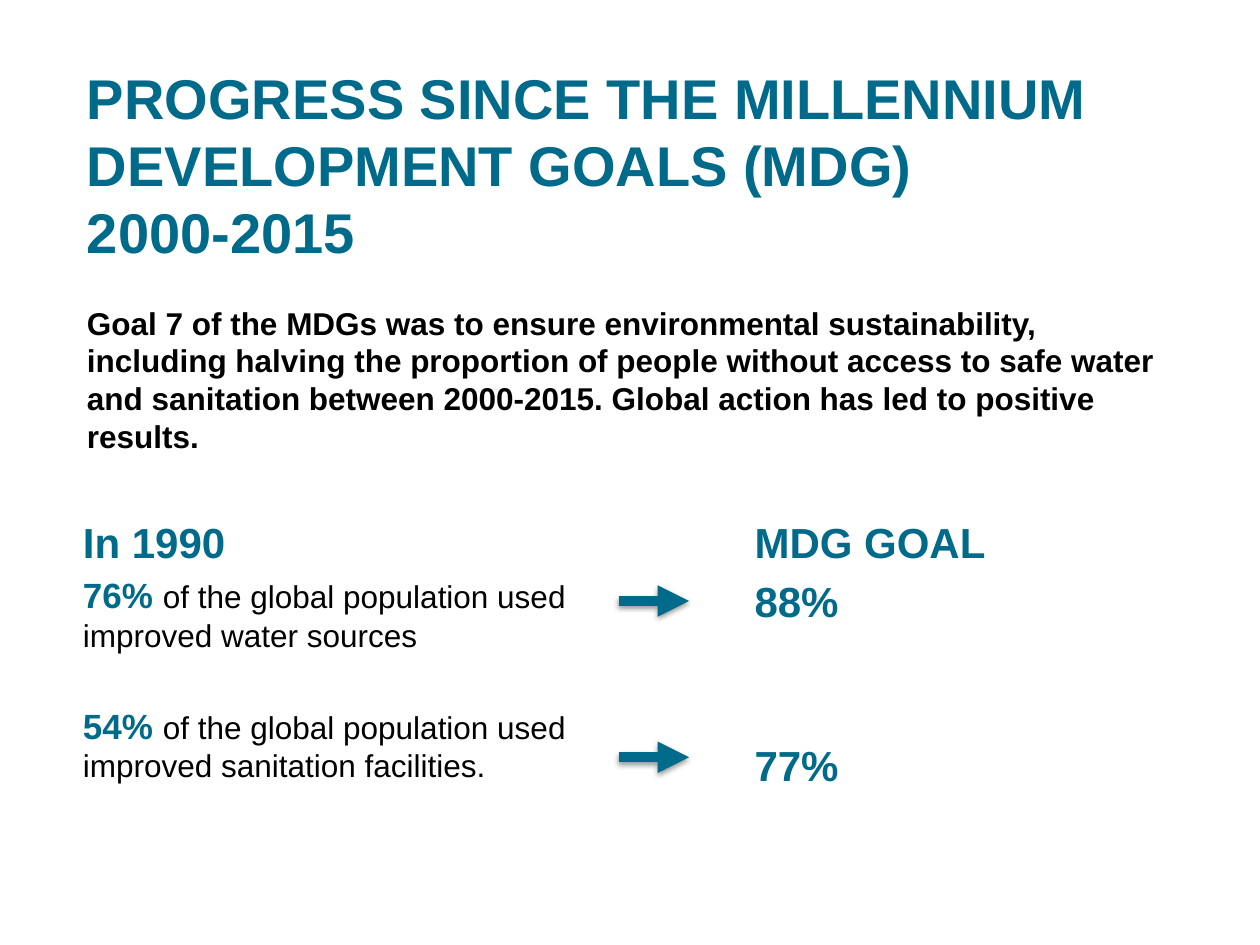
from dataclasses import dataclass

from lxml.etree import SubElement
from pptx import Presentation
from pptx.dml.color import RGBColor
from pptx.enum.shapes import MSO_CONNECTOR
from pptx.enum.text import MSO_ANCHOR, MSO_AUTO_SIZE, PP_ALIGN
from pptx.oxml import parse_xml
from pptx.oxml.ns import nsdecls, qn
from pptx.util import Inches, Pt


@dataclass(frozen=True)
class Theme:
    font: str = "Arial"
    accent: RGBColor = RGBColor(0x00, 0x6A, 0x8A)
    text: RGBColor = RGBColor(0x00, 0x00, 0x00)
    title_size: int = 32
    heading_size: int = 24
    figure_size: int = 20
    body_size: int = 18
    arrow_width: int = 6
    line_spacing: float = 1.0


ARROW_SHADOW = f"""<a:effectLst {nsdecls("a")}>
  <a:outerShdw blurRad="39370" dist="20320" dir="5400000" rotWithShape="0">
    <a:srgbClr val="000000"><a:alpha val="38000"/></a:srgbClr>
  </a:outerShdw>
</a:effectLst>"""


class SlideBuilder:
    """Holds the theme and the current slide."""

    def __init__(self, slide, theme):
        self.slide = slide
        self.theme = theme
        self.title_style = self.style(theme.title_size, theme.accent)
        self.heading = self.style(theme.heading_size, theme.accent)
        self.figure = self.style(theme.figure_size, theme.accent)
        self.lead = self.style(theme.body_size, theme.text)
        self.body = self.style(theme.body_size, theme.text, bold=False)

    def style(self, size, color, bold=True):
        return {"name": self.theme.font, "size": Pt(size), "bold": bold, "color": color}

    def format_font(self, font, style):
        for name, value in style.items():
            if name == "color":
                font.color.rgb = value
            else:
                setattr(font, name, value)

    def place(self, shape, left, top, width, height):
        bounds = {"left": left, "top": top, "width": width, "height": height}
        for name, value in bounds.items():
            setattr(shape, name, Inches(value))

    def fill_text(self, shape, paragraphs, wrap=True):
        """Each paragraph is (space before in points, [(text, style), ...])."""
        frame = shape.text_frame
        settings = {
            "word_wrap": wrap,
            "auto_size": MSO_AUTO_SIZE.NONE,
            "vertical_anchor": MSO_ANCHOR.TOP,
        }
        for name, value in settings.items():
            setattr(frame, name, value)
        for index, (space, runs) in enumerate(paragraphs):
            paragraph = frame.add_paragraph() if index else frame.paragraphs[0]
            properties = paragraph._p.get_or_add_pPr()
            properties.set("marL", "0")
            properties.set("indent", "0")
            SubElement(properties, qn("a:buNone"))
            paragraph.alignment = PP_ALIGN.LEFT
            paragraph.line_spacing = self.theme.line_spacing
            paragraph.space_before = Pt(space)
            for text, style in runs:
                for line_index, line in enumerate(text.split("\n")):
                    if line_index:
                        paragraph.add_line_break()
                    run = paragraph.add_run()
                    run.text = line
                    self.format_font(run.font, style)

    def placeholder(self, index, bounds, text, style):
        shape = self.slide.placeholders[index]
        self.place(shape, *bounds)
        self.fill_text(shape, [(0, [(text, style)])])

    def text_box(self, bounds, paragraphs, wrap=True):
        shape = self.slide.shapes.add_textbox(*map(Inches, bounds))
        self.fill_text(shape, paragraphs, wrap)

    def arrow(self, left, top, length):
        connector = self.slide.shapes.add_connector(
            MSO_CONNECTOR.STRAIGHT,
            Inches(left), Inches(top), Inches(left + length), Inches(top),
        )
        connector.line.color.rgb = self.theme.accent
        connector.line.width = Pt(self.theme.arrow_width)
        SubElement(connector.line._get_or_add_ln(), qn("a:tailEnd"), type="triangle")
        connector._element.spPr.append(parse_xml(ARROW_SHADOW))


def main():
    presentation = Presentation()
    presentation.slide_width = Inches(10)
    presentation.slide_height = Inches(7.5)
    slide = presentation.slides.add_slide(presentation.slide_layouts[1])
    builder = SlideBuilder(slide, Theme())

    # Title and introduction
    builder.placeholder(
        0, (0.59, 0.45, 8.7, 1.25),
        "PROGRESS SINCE THE MILLENNIUM DEVELOPMENT GOALS (MDG) \n2000-2015",
        builder.title_style,
    )
    builder.placeholder(
        1, (0.59, 2.36, 8.7, 1.61),
        "Goal 7 of the MDGs was to ensure environmental sustainability, "
        "including halving the proportion of people without access to safe water "
        "and sanitation between 2000-2015. Global action has led to positive results.",
        builder.lead,
    )

    # Starting point in 1990
    facts = [
        (4, "76% ", "of the global population used improved water sources"),
        (29, "54% ", "of the global population used improved sanitation facilities."),
    ]
    builder.text_box(
        (0.56, 4.05, 4.35, 1.61),
        [(0, [("In 1990", builder.heading)])]
        + [
            (space, [(share, builder.figure), (fact, builder.body)])
            for space, share, fact in facts
        ],
    )

    # Goals
    builder.text_box(
        (5.89, 4.05, 4.11, 1.61),
        [(0, [("MDG GOAL", builder.heading)]), (5, [("88%", builder.heading)])],
    )
    builder.text_box(
        (5.89, 5.82, 0.88, 0.5), [(0, [("77%", builder.heading)])], wrap=False
    )

    # Arrows from starting point to goal
    for top in (4.77, 6.01):
        builder.arrow(4.91, top, 0.56)

    presentation.save("out.pptx")


if __name__ == "__main__":
    main()
